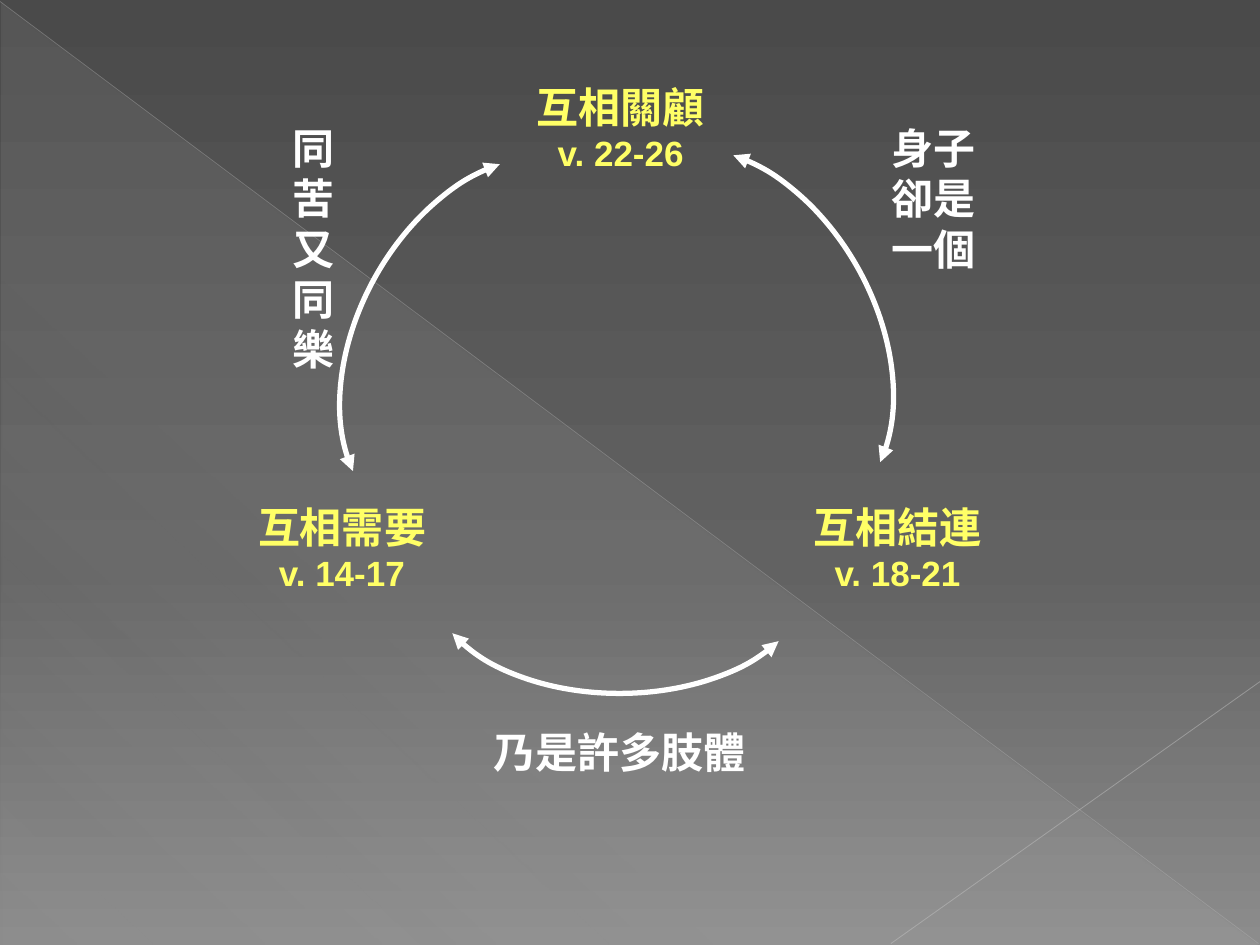
from dataclasses import dataclass

from lxml import etree
from pptx import Presentation
from pptx.dml.color import RGBColor
from pptx.enum.shapes import MSO_CONNECTOR, MSO_SHAPE
from pptx.enum.text import PP_ALIGN
from pptx.oxml.ns import qn
from pptx.util import Cm, Pt

ARC, TRIANGLE = MSO_SHAPE.ARC, MSO_SHAPE.RIGHT_TRIANGLE
STRAIGHT = MSO_CONNECTOR.STRAIGHT
CENTER = PP_ALIGN.CENTER
ADJUSTMENT_PER_DEGREE = 0.6


@dataclass(frozen=True)
class Theme:
    font: str = "Arial"
    heading: str = "FFFF66"
    white: str = "FFFFFF"
    shadow: str = "000000"
    large: int = 24
    small: int = 20
    arc_width: int = 3
    # Gradient stops: position, colour, opacity (all in percent)
    sky: tuple = ((0, "4A4A4A", 100), (60, "626262", 100), (100, "8C8C8C", 100))
    sheen: tuple = ((0, "D2D2D2", 10), (70, "D2D2D2", 8), (100, "D2D2D2", 1))


@dataclass(frozen=True)
class Box:
    """A rectangle in centimetres."""
    left: float
    top: float
    width: float
    height: float

    def inside(self, left, top, width, height):
        return Box(self.left + left, self.top + top, width, height)

    def lengths(self):
        return [Cm(n) for n in (self.left, self.top, self.width, self.height)]


THEME = Theme()


def add_child(parent, tag, **attributes):
    child = etree.SubElement(parent, qn(tag))
    for name, value in attributes.items():
        child.set(name, str(value))
    return child


def add_color(parent, color, opacity):
    node = add_child(parent, "a:srgbClr", val=color)
    add_child(node, "a:alpha", val=opacity * 1000)


def set_gradient(fill, element, stops, angle):
    fill.gradient()
    gradient = next(element.iter(qn("a:gradFill")))
    for child in list(gradient):
        gradient.remove(child)
    stop_list = add_child(gradient, "a:gsLst")
    for position, color, opacity in stops:
        add_color(add_child(stop_list, "a:gs", pos=position * 1000), color, opacity)
    add_child(gradient, "a:lin", ang=angle * 60000, scaled=0)


def add_text(page, box, lines, color):
    """Add centred bold lines, given as (text, size), with a soft shadow."""
    frame = page.shapes.add_textbox(*box.lengths()).text_frame
    frame.word_wrap = True
    frame.text = "\n".join(text for text, size in lines)
    for para, (text, size) in zip(frame.paragraphs, lines):
        para.alignment = CENTER
        span = para.runs[0]
        span.font.name = THEME.font
        span.font.size = Pt(size)
        span.font.bold = True
        span.font.color.rgb = RGBColor.from_string(color)
        effects = etree.Element(qn("a:effectLst"))
        shadow = add_child(effects, "a:outerShdw", blurRad=Pt(3), dist=Pt(4),
                           dir=60 * 60000, algn="tl", rotWithShape=0)
        add_color(shadow, THEME.shadow, 80)
        next(para._p.iter(qn("a:solidFill"))).addnext(effects)


def add_arc(page, box, start, end, rotation, flipped):
    """Add a double-headed arc; angles in degrees."""
    arc = page.shapes.add_shape(ARC, *box.lengths())
    arc.shadow.inherit = False
    arc.adjustments[0] = start * ADJUSTMENT_PER_DEGREE
    arc.adjustments[1] = end * ADJUSTMENT_PER_DEGREE
    arc.rotation = rotation
    if flipped:
        next(arc._element.iter(qn("a:xfrm"))).set("flipH", "1")
    arc.fill.background()
    arc.line.color.rgb = RGBColor.from_string(THEME.white)
    arc.line.width = Pt(THEME.arc_width)
    outline = next(arc._element.iter(qn("a:ln")))
    for tag in ("a:headEnd", "a:tailEnd"):
        add_child(outline, tag, type="triangle")


def draw_backdrop(page, box):
    background = page.background.fill
    set_gradient(background, page._element, THEME.sky, 90)

    # Translucent lower-left triangle
    sheen = page.shapes.add_shape(TRIANGLE, *box.inside(0.03, 0.05, 25.35, 19).lengths())
    sheen.shadow.inherit = False
    sheen.line.fill.background()
    set_gradient(sheen.fill, sheen._element, THEME.sheen, 133)

    # Fine diagonals: start, end, colour, width, opacity
    for start, end, color, width, opacity in (
        ((0, 0.03), (25.37, 19.02), "BFBFBF", 0.39, 35),
        ((25.4, 13.74), (17.96, 19.02), "C6C6C6", 0.47, 45),
    ):
        points = [Cm(n) for x, y in (start, end) for n in (box.left + x, box.top + y)]
        line = page.shapes.add_connector(STRAIGHT, *points)
        line.line.color.rgb = RGBColor.from_string(color)
        line.line.width = Pt(width)
        add_child(next(line._element.iter(qn("a:srgbClr"))), "a:alpha", val=opacity * 1000)
        add_child(line._element.spPr, "a:effectLst")


def draw_cycle(page, box):
    # Three headings with verse numbers
    for left, top, title, verses in (
        (5.62, 0, "互相關顧", "v. 22-26"),
        (0, 8.46, "互相需要", "v. 14-17"),
        (11.2, 8.46, "互相結連", "v. 18-21"),
    ):
        lines = [(title, THEME.large), (verses, THEME.small)]
        add_text(page, box.inside(left, top, 5.21, 2.13), lines, THEME.heading)

    # Captions outside the arcs
    for place, caption in (
        ((1.02, 0.82, 2.03, 5.38), "同苦又同樂"),
        ((13.41, 0.82, 2.22, 6.4), "身子卻是一個"),
        ((5.21, 13.01, 5.99, 1.27), "乃是許多肢體"),
    ):
        add_text(page, box.inside(*place), [(caption, THEME.large)], THEME.white)

    # Arcs joining the headings
    for place, start, rotation, flipped in (
        ((2.92, 1.38, 5.36, 8.03), 295.86, 28.8, True),
        ((5.87, 6.3, 4.65, 7.67), 291.61, 90, False),
        ((8, 1.2, 5.36, 8.03), 295.86, 331.2, False),
    ):
        add_arc(page, box.inside(*place), start, 71.73, rotation, flipped)


def main():
    deck = Presentation()
    deck.slide_width, deck.slide_height = Cm(25.4), Cm(19.05)
    page = deck.slides.add_slide(deck.slide_layouts[6])
    draw_backdrop(page, Box(0, 0, 25.4, 19.05))
    draw_cycle(page, Box(4.29, 1.52, 16.41, 14.28))
    deck.save("out.pptx")


if __name__ == "__main__":
    main()
